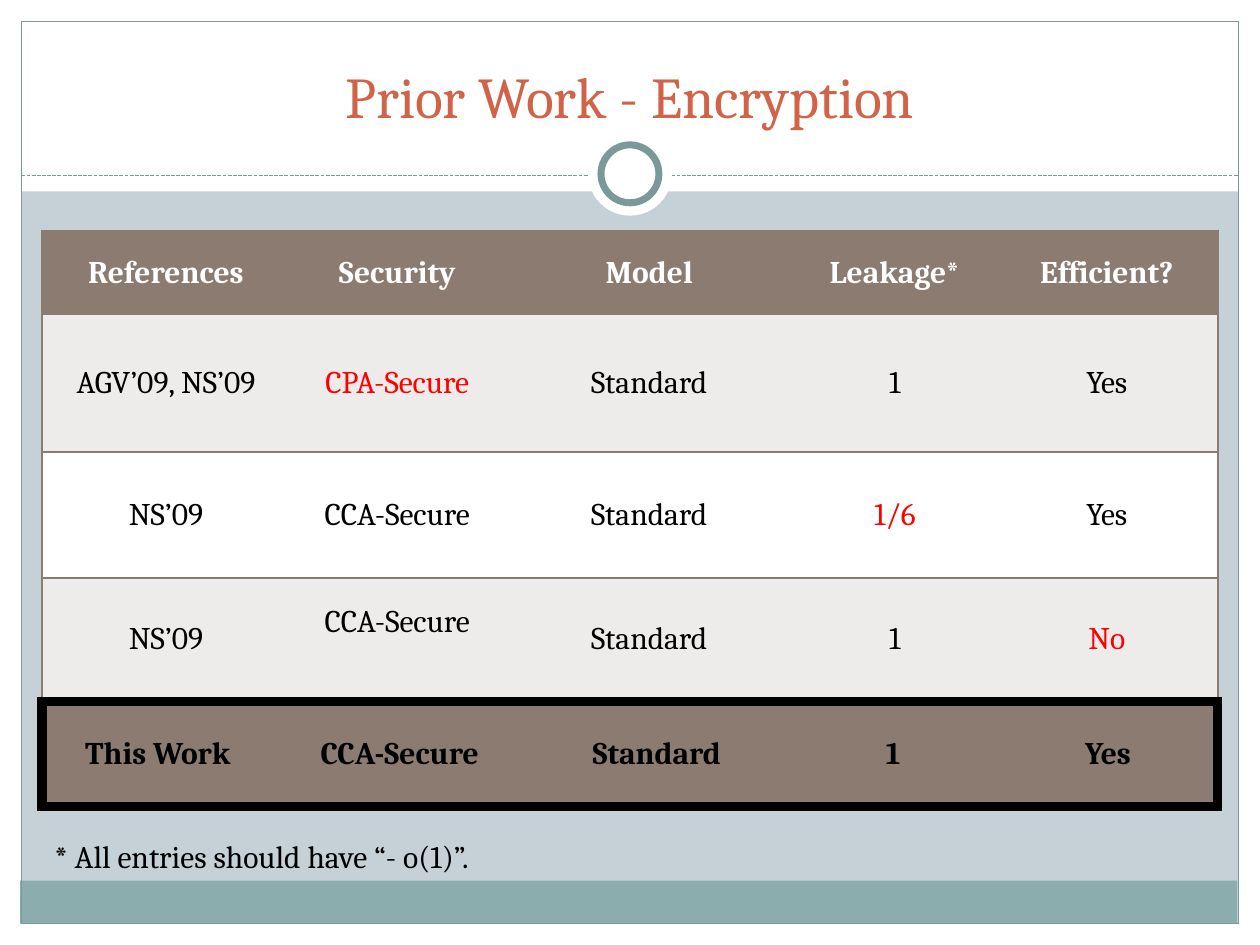
"""Build the slide that compares prior encryption work in two tables."""
from lxml.etree import SubElement
from pptx import Presentation
from pptx.dml.color import RGBColor
from pptx.enum.dml import MSO_LINE
from pptx.enum.shapes import MSO_CONNECTOR, MSO_SHAPE
from pptx.enum.text import MSO_ANCHOR, PP_ALIGN
from pptx.oxml import parse_xml
from pptx.oxml.ns import nsdecls, qn
from pptx.util import Inches, Pt


def paint(target, color):
    target.solid()
    target.fore_color.rgb = RGBColor.from_string(color)


def write(frame, text, size, color, bold=False, align=PP_ALIGN.CENTER):
    frame.word_wrap = True
    paragraph = frame.paragraphs[0]
    paragraph.text = text
    paragraph.alignment = align
    paragraph.font.name = "Cambria"
    paragraph.font.size = Pt(size)
    paragraph.font.bold = bold
    paragraph.font.color.rgb = RGBColor.from_string(color)


WHITE, BLACK, RED = "FFFFFF", "000000", "FF0000"
BROWN, PALE, TEAL = "8C7B70", "EEECEB", "7C999A"

presentation = Presentation()
presentation.slide_width, presentation.slide_height = Inches(10), Inches(7.5)
unit = presentation.slide_width / 100
slide = presentation.slides.add_slide(presentation.slide_layouts[6])
paint(slide.background.fill, "C5D1D7")

decorations = [
    (MSO_SHAPE.RECTANGLE, 0, 73.3, 100, 1.7, WHITE, 0),
    (MSO_SHAPE.RECTANGLE, 0, 0, 100, 15.2, WHITE, 0),
    (MSO_SHAPE.RECTANGLE, 0, 0, 1.7, 75, WHITE, 0),
    (MSO_SHAPE.RECTANGLE, 98.3, 0, 1.7, 75, WHITE, 0),
    (MSO_SHAPE.RECTANGLE, 1.6, 69.9, 96.6, 3.4, "8CADAE", 0),
    (MSO_SHAPE.RECTANGLE, 1.7, 1.7, 96.6, 71.6, None, 0.75),
    (MSO_CONNECTOR.STRAIGHT, 1.7, 13.95, 98.3, 13.95, None, 0.75),
    (MSO_SHAPE.OVAL, 46.67, 10.45, 6.67, 6.67, WHITE, 0),
    (MSO_SHAPE.OVAL, 47.7, 11.5, 4.6, 4.6, WHITE, 4),
]
for kind, *place, fill, weight in decorations:
    place = [round(length * unit) for length in place]
    if kind is MSO_CONNECTOR.STRAIGHT:
        shape = slide.shapes.add_connector(kind, *place)
        shape.line.dash_style = MSO_LINE.SQUARE_DOT
        SubElement(shape._element.spPr, qn("a:effectLst"))
    else:
        shape = slide.shapes.add_shape(kind, *place)
        shape.shadow.inherit = False
        if fill:
            paint(shape.fill, fill)
        else:
            shape.fill.background()
    if weight:
        paint(shape.line.fill, TEAL)
        shape.line.width = Pt(weight)
    else:
        shape.line.fill.background()

texts = [
    ("Prior Work - Encryption", 2.5, 93.33, 8.3, 33, "D16349", PP_ALIGN.CENTER, MSO_ANCHOR.BOTTOM),
    ("* All entries should have “- o(1)”.", 65.95, 87.5, 4, 18, BLACK, PP_ALIGN.LEFT, MSO_ANCHOR.TOP),
]
for text, top, width, height, size, color, align, anchor in texts:
    place = [round(length * unit) for length in (3.33, top, width, height)]
    frame = slide.shapes.add_textbox(*place).text_frame
    frame.vertical_anchor = anchor
    write(frame, text, size, color, align=align)

prior_work = [
    ["References", "Security", "Model", "Leakage*", "Efficient?"],
    ["AGV’09, NS’09", "CPA-Secure", "Standard", "1", "Yes"],
    ["NS’09", "CCA-Secure", "Standard", "1/6", "Yes"],
    ["NS’09", "CCA-Secure", "Standard", "1", "No"],
]
this_work = [["This Work", "CCA-Secure", "Standard", "1", "Yes"]]
weaknesses = {"CPA-Secure", "1/6", "No"}
tables = [
    (prior_work, 18.33, [19.7, 17, 23, 16, 17.63], [6.65, 10.9, 10, 9.8],
     [BROWN, PALE, WHITE, PALE], WHITE, BROWN, 1),
    (this_work, 55.7, [18.4, 20, 20.8, 16.7, 17.43], [8.3], [BROWN], BLACK, BLACK, 6),
]
for entries, top, widths, heights, fills, head_color, border, weight in tables:
    place = [round(length * unit) for length in (3.33, top, sum(widths), sum(heights))]
    table = slide.shapes.add_table(len(heights), len(widths), *place).table
    table.first_row = table.horz_banding = False
    for column, width in zip(table.columns, widths):
        column.width = round(width * unit)
    for row_index, (row, height) in enumerate(zip(table.rows, heights)):
        row.height = round(height * unit)
        for column_index, cell in enumerate(row.cells):
            outer = {"L": column_index == 0, "R": column_index == len(widths) - 1, "T": True, "B": True}
            for side, drawn in outer.items():
                paint_xml = f'<a:solidFill><a:srgbClr val="{border}"/></a:solidFill>' if drawn else "<a:noFill/>"
                cell._tc.get_or_add_tcPr().append(parse_xml(
                    f'<a:ln{side} {nsdecls("a")} w="{Pt(weight)}">{paint_xml}</a:ln{side}>'))
            paint(cell.fill, fills[row_index])
            cell.vertical_anchor = MSO_ANCHOR.MIDDLE
            text = entries[row_index][column_index]
            color = RED if text in weaknesses else head_color if row_index == 0 else BLACK
            write(cell.text_frame, text, 18, color, bold=row_index == 0)
            if (row_index, column_index) == (3, 1):
                cell.margin_bottom = round(3.3 * unit)

presentation.save("out.pptx")
